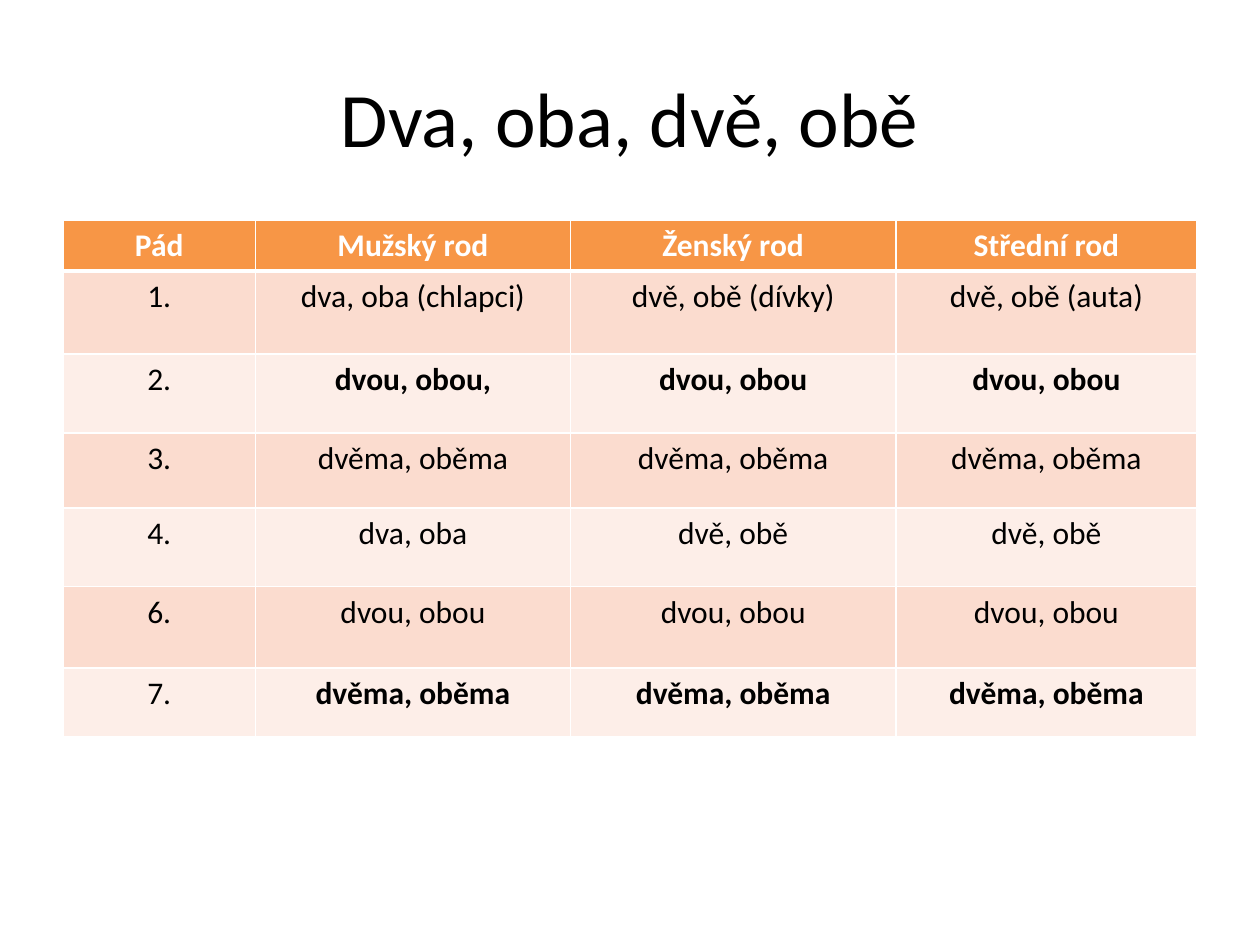
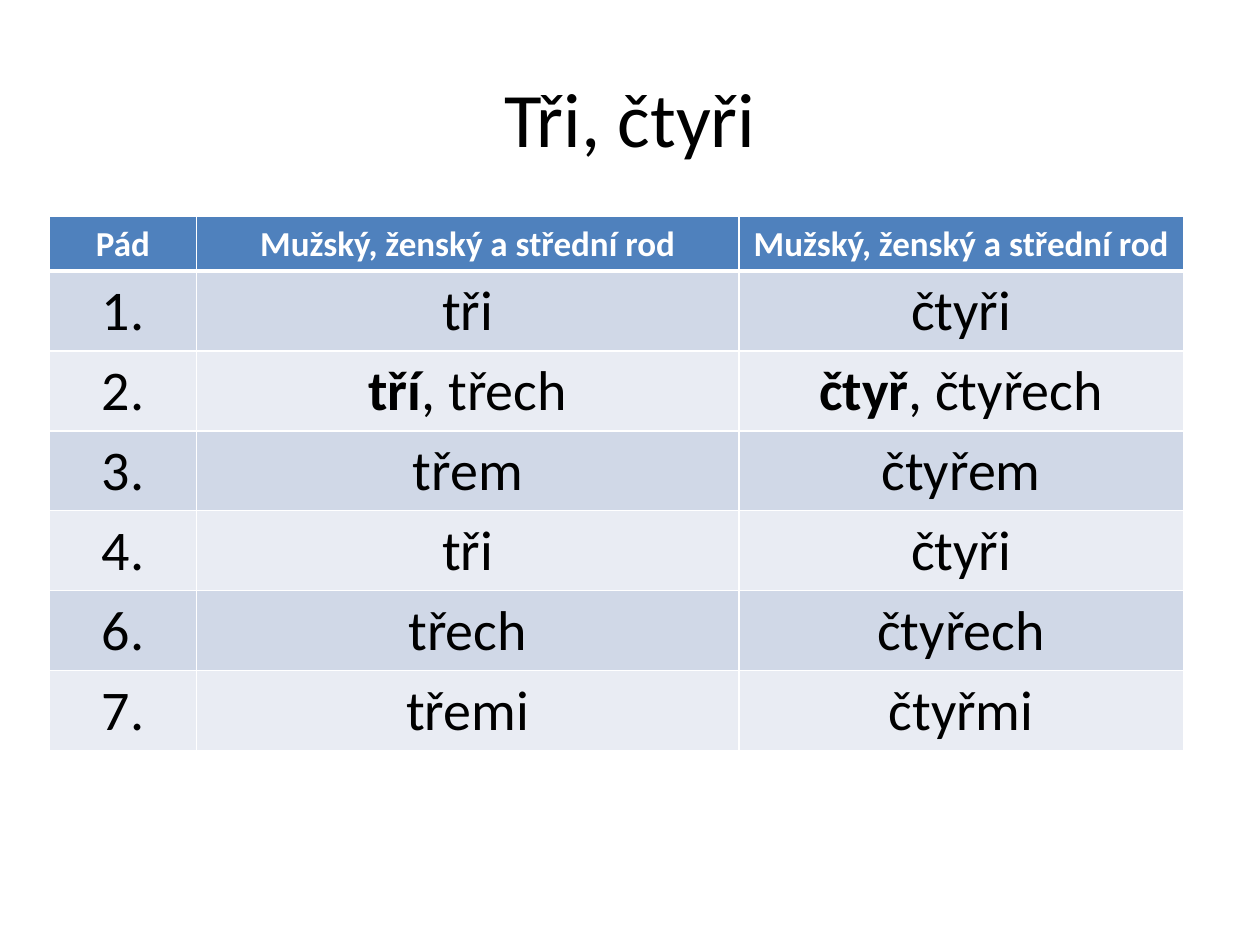
from dataclasses import dataclass

from lxml.etree import SubElement
from pptx import Presentation
from pptx.dml.color import RGBColor as Color
from pptx.enum.text import MSO_ANCHOR as Anchor, PP_ALIGN as Align
from pptx.oxml.ns import qn
from pptx.util import Pt


@dataclass(frozen=True)
class Theme:
    font: str = "Calibri"
    ink: str = "000000"
    paper: str = "FFFFFF"
    orange: tuple = ("F79646", "FBDCCF", "FDEEE8")
    blue: tuple = ("4F81BD", "D0D8E7", "E9ECF3")
    title_size: int = 44
    small: int = 18
    medium: int = 20
    large: int = 32
    thin: float = 0.96
    thick: float = 3


class DeclensionDeck:
    """Holds the theme and the current slide, and draws titles and case tables."""

    def __init__(self, theme):
        self.theme = theme
        self.deck = Presentation()
        self.deck.slide_width, self.deck.slide_height = Pt(720), Pt(540)
        self.page = None

    def add_page(self, title):
        self.page = self.deck.slides.add_slide(self.deck.slide_layouts[6])
        box = self.page.shapes.add_textbox(Pt(36), Pt(21.6), Pt(648), Pt(90))
        box.text_frame.word_wrap = True
        box.text_frame.vertical_anchor = Anchor.MIDDLE
        self.add_text(box.text_frame, title, self.theme.title_size, self.theme.ink)

    def add_text(self, frame, text, size, color, bold=False):
        para = frame.paragraphs[0]
        para.alignment = Align.CENTER
        para.font.name = self.theme.font
        para.font.size = Pt(size)
        para.font.color.rgb = Color.from_string(color)
        para.font.bold = bold
        for index, part in enumerate(text.split("*")):
            if part:
                span = para.add_run()
                span.text = part
                if index % 2:
                    span.font.bold = True

    def add_borders(self, cell, top, bottom):
        properties = cell._tc.get_or_add_tcPr()
        thin = self.theme.thin
        for side, width in zip("LRTB", (thin, thin, top, bottom)):
            line = SubElement(properties, qn(f"a:ln{side}"), w=str(int(Pt(width))))
            fill = SubElement(line, qn("a:solidFill"))
            SubElement(fill, qn("a:srgbClr"), val=self.theme.paper)

    def add_case_table(self, left, top, widths, heights, rows, fills, header_size, body_size):
        theme = self.theme
        table = self.page.shapes.add_table(
            len(rows), len(widths), Pt(left), Pt(top), Pt(sum(widths)), Pt(sum(heights))
        ).table
        table.horz_banding = False
        for column, width in zip(table.columns, widths):
            column.width = Pt(width)
        for number, (row, height, texts) in enumerate(zip(table.rows, heights, rows)):
            row.height = Pt(height)
            header = number == 0
            fill = fills[0] if header else fills[2 - number % 2]
            for cell, text in zip(row.cells, texts):
                self.add_borders(
                    cell,
                    theme.thick if number == 1 else theme.thin,
                    theme.thick if header else theme.thin,
                )
                cell.fill.solid()
                cell.fill.fore_color.rgb = Color.from_string(fill)
                if header:
                    self.add_text(cell.text_frame, text, header_size, theme.paper, bold=True)
                else:
                    self.add_text(cell.text_frame, text, body_size, theme.ink)


def main():
    theme = Theme()
    show = DeclensionDeck(theme)

    show.add_page("Dva, oba, dvě, obě")
    show.add_case_table(
        36, 126, [110, 180, 186, 172], [26, 47.5, 45, 43, 45, 46.5, 39.5],
        [
            ("Pád", "Mužský rod", "Ženský rod", "Střední rod"),
            ("1.", "dva, oba (chlapci)", "dvě, obě (dívky)", "dvě, obě (auta)"),
            ("2.", "*dvou, obou,*", "*dvou, obou*", "*dvou, obou*"),
            ("3.", *["dvěma, oběma"] * 3),
            ("4.", "dva, oba", "dvě, obě", "dvě, obě"),
            ("6.", *["dvou, obou"] * 3),
            ("7.", *["*dvěma, oběma*"] * 3),
        ],
        theme.orange, theme.small, theme.small,
    )

    show.add_page("Tři, čtyři")
    genders = "Mužský, ženský a střední rod"
    show.add_case_table(
        28.3, 123.7, [84, 310, 254], [27.5] + [39.6] * 6,
        [
            ("Pád", genders, genders),
            ("1.", "tři", "čtyři"),
            ("2.", "*tří*, třech", "*čtyř*, čtyřech"),
            ("3.", "třem", "čtyřem"),
            ("4.", "tři", "čtyři"),
            ("6.", "třech", "čtyřech"),
            ("7.", "třemi", "čtyřmi"),
        ],
        theme.blue, theme.medium, theme.large,
    )

    show.deck.save("out.pptx")


if __name__ == "__main__":
    main()
